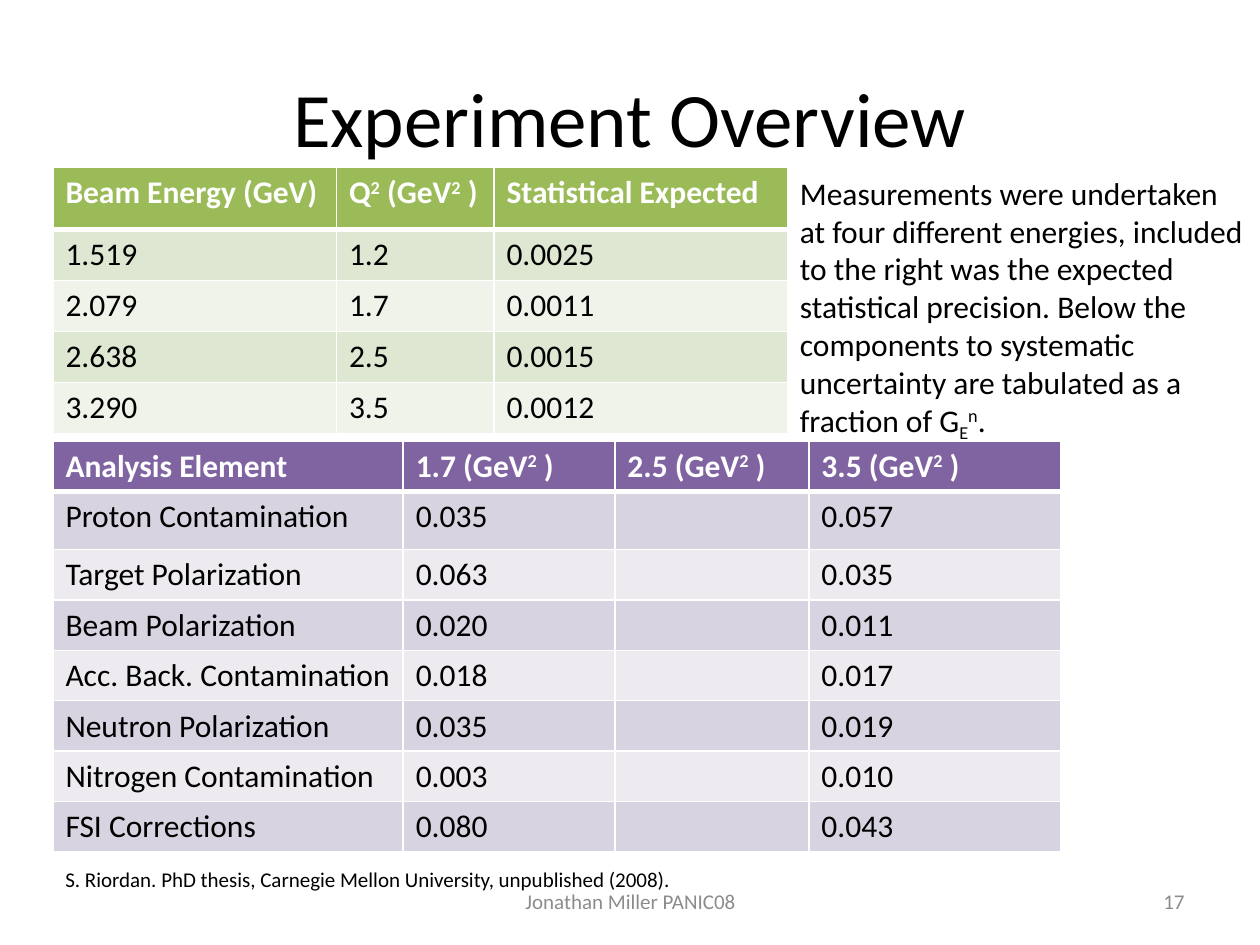
from dataclasses import dataclass

from lxml.etree import SubElement
from pptx import Presentation
from pptx.dml.color import RGBColor
from pptx.enum.text import MSO_ANCHOR as Anchor, PP_ALIGN as Align
from pptx.oxml.ns import qn
from pptx.util import Inches, Pt


@dataclass(frozen=True)
class Theme:
    font: str = "Calibri"
    text: str = "000000"
    white: str = "FFFFFF"
    muted: str = "8C8C8C"
    # Header, odd row and even row fills
    green: tuple = ("9BBB59", "DEE7D1", "EFF3EA")
    purple: tuple = ("8064A2", "D8D3E0", "EDEAF0")
    title_size: int = 44
    body_size: int = 18
    small_size: int = 12
    thin_line: int = 1
    thick_line: int = 3


BASELINES = {"^": "30000", "_": "-25000"}


def write_text(frame, text, *, font, size, color, bold=False,
               align=Align.LEFT, anchor=Anchor.TOP):
    """Write text split at "|"; a part led by ^ is raised, by _ lowered."""
    frame.word_wrap = True
    frame.vertical_anchor = anchor
    paragraph = frame.paragraphs[0]
    paragraph.alignment = align
    for part in text.split("|"):
        run = paragraph.add_run()
        baseline = BASELINES.get(part[:1])
        run.text = part[1:] if baseline else part
        run.font.name = font
        run.font.size = Pt(size)
        run.font.bold = bold
        run.font.color.rgb = RGBColor.from_string(color)
        if baseline:
            run._r.get_or_add_rPr().set("baseline", baseline)


class SlideBuilder:
    def __init__(self, slide, theme):
        self.slide = slide
        self.theme = theme

    def title(self, text, left, top, width, height):
        shape = self.slide.shapes.title
        shape.left, shape.top = Inches(left), Inches(top)
        shape.width, shape.height = Inches(width), Inches(height)
        write_text(shape.text_frame, text, font=self.theme.font,
                   size=self.theme.title_size, color=self.theme.text,
                   align=Align.CENTER, anchor=Anchor.MIDDLE)

    def text(self, text, left, top, width, height, **style):
        box = self.slide.shapes.add_textbox(
            Inches(left), Inches(top), Inches(width), Inches(height))
        style = {"size": self.theme.body_size, "color": self.theme.text} | style
        write_text(box.text_frame, text, font=self.theme.font, **style)

    def border(self, cell, side, width):
        line = SubElement(cell._tc.get_or_add_tcPr(), qn(f"a:ln{side}"),
                          w=str(Pt(width)))
        fill = SubElement(line, qn("a:solidFill"))
        SubElement(fill, qn("a:srgbClr"), val=self.theme.white)

    def table(self, rows, left, top, widths, heights, fills):
        theme = self.theme
        table = self.slide.shapes.add_table(
            len(rows), len(widths), Inches(left), Inches(top),
            Inches(sum(widths)), Inches(sum(heights))).table
        for column, width in zip(table.columns, widths):
            column.width = Inches(width)
        for row_index, (values, height) in enumerate(zip(rows, heights)):
            table.rows[row_index].height = Inches(height)
            header = row_index == 0
            fill = fills[0] if header else fills[2 - row_index % 2]
            # The header is set off by a thick line below it
            thick_sides = {0: "B", 1: "T"}.get(row_index, "")
            for column_index, value in enumerate(values):
                cell = table.cell(row_index, column_index)
                for side in "LRTB":
                    self.border(cell, side, theme.thick_line
                                if side in thick_sides else theme.thin_line)
                cell.fill.solid()
                cell.fill.fore_color.rgb = RGBColor.from_string(fill)
                if value:
                    write_text(cell.text_frame, value, font=theme.font,
                               size=theme.body_size, bold=header,
                               color=theme.white if header else theme.text)


ENERGY_ROWS = [
    ("Beam Energy (GeV)", "Q|^2| (GeV|^2| )", "Statistical Expected"),
    ("1.519", "1.2", "0.0025"),
    ("2.079", "1.7", "0.0011"),
    ("2.638", "2.5", "0.0015"),
    ("3.290", "3.5", "0.0012"),
]
UNCERTAINTY_ROWS = [
    ("Analysis Element", *(f"{q} (GeV|^2| )" for q in ("1.7", "2.5", "3.5"))),
    ("Proton Contamination", "0.035", "", "0.057"),
    ("Target Polarization", "0.063", "", "0.035"),
    ("Beam Polarization", "0.020", "", "0.011"),
    ("Acc. Back. Contamination", "0.018", "", "0.017"),
    ("Neutron Polarization", "0.035", "", "0.019"),
    ("Nitrogen Contamination", "0.003", "", "0.010"),
    ("FSI Corrections", "0.080", "", "0.043"),
]
EXPLANATION = (
    "Measurements were undertaken at four different energies, included to the "
    "right was the expected statistical precision. Below the components to "
    "systematic uncertainty are tabulated as a fraction of G|_E|^n|.")


def main():
    theme = Theme()
    presentation = Presentation()
    presentation.slide_width, presentation.slide_height = Inches(10), Inches(7.5)
    title_only = presentation.slide_layouts[5]
    builder = SlideBuilder(presentation.slides.add_slide(title_only), theme)
    left, row_height = 0.42, 0.4

    builder.title("Experiment Overview", 0.5, 0.3, 9, 1.25)

    # Beam energies and expected precision
    builder.table(ENERGY_ROWS, left, 1.33, [2.25, 1.25, 2.33],
                  [0.49] + [row_height] * 4, theme.green)

    # Footer
    footer = {"size": theme.small_size, "color": theme.muted,
              "anchor": Anchor.MIDDLE}
    builder.text("17", 7.17, 6.95, 2.33, 0.4, align=Align.RIGHT, **footer)
    builder.text("Jonathan Miller PANIC08", 3.42, 6.95, 3.17, 0.4,
                 align=Align.CENTER, **footer)

    # Systematic uncertainties
    builder.table(UNCERTAINTY_ROWS, left, 3.5, [2.78, 1.68, 1.54, 2],
                  [row_height, 0.46] + [row_height] * 6, theme.purple)

    # Explanation and source
    builder.text(EXPLANATION, 6.25, 1.33, 3.75, 2.22)
    builder.text("S. Riordan. PhD thesis, Carnegie Mellon University, "
                 "unpublished (2008).", left, 6.83, 5.5, 0.3,
                 size=theme.small_size)

    presentation.save("out.pptx")


if __name__ == "__main__":
    main()
